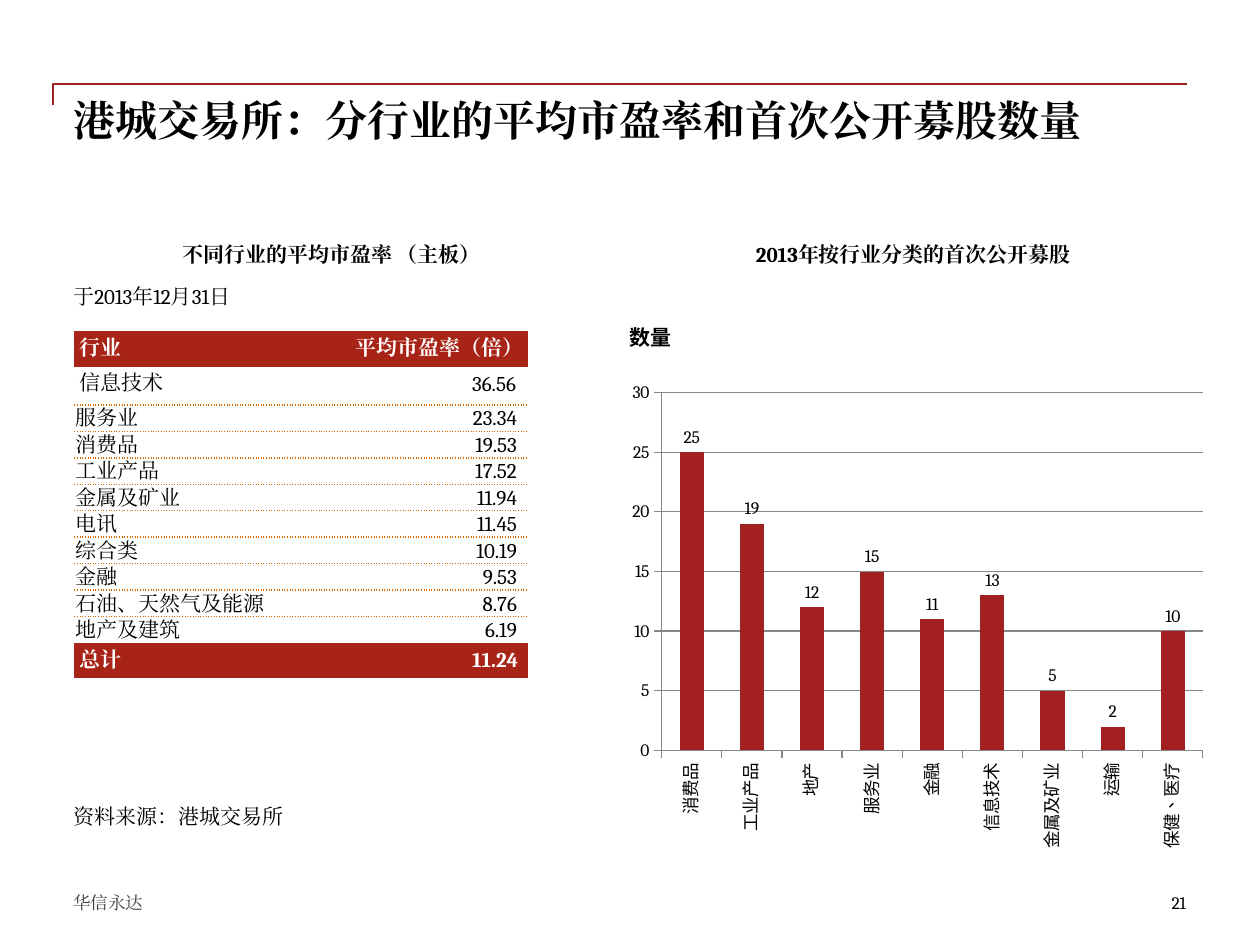
from lxml import etree
from pptx import Presentation
from pptx.chart.data import CategoryChartData
from pptx.dml.color import RGBColor
from pptx.enum import chart as charts, text
from pptx.oxml import ns, parse_xml
from pptx.util import Cm, Pt

COLORS = {"rule": "A32020", "band": "A82417", "dots": "DC6900", "ink": "000000",
          "white": "FFFFFF", "footer": "404040", "grid": "868686"}
FACE = "Cambria"
NO_STYLE = "{2D5ABB26-0587-4C30-8999-92F81FD0307C}"
LEFT, CENTER, RIGHT = text.PP_ALIGN.LEFT, text.PP_ALIGN.CENTER, text.PP_ALIGN.RIGHT

RATIOS = [("信息技术", "36.56"), ("服务业", "23.34"), ("消费品", "19.53"),
          ("工业产品", "17.52"), ("金属及矿业", "11.94"), ("电讯", "11.45"),
          ("综合类", "10.19"), ("金融", "9.53"), ("石油、天然气及能源", "8.76"),
          ("地产及建筑", "6.19")]
OFFERINGS = {"消费品": 25, "工业产品": 19, "地产": 12, "服务业": 15, "金融": 11,
             "信息技术": 13, "金属及矿业": 5, "运输": 2, "保健、医疗": 10}


def rgb(name):
    return RGBColor.from_string(COLORS[name])


def apply(target, values):
    for name, value in values.items():
        setattr(target, name, value)


def style_font(font, size=12, bold=False, color="ink"):
    """Set the face for Latin and East Asian text alike."""
    apply(font, {"name": FACE, "size": Pt(size), "bold": bold})
    font.color.rgb = rgb(color)
    latin = font._element.find(ns.qn("a:latin")) if hasattr(font, "_element") else font._rPr.find(ns.qn("a:latin"))
    east_asian = etree.Element(ns.qn("a:ea"), typeface=FACE)
    latin.addnext(east_asian)


def write(frame, words, align=LEFT, **look):
    paragraph = frame.paragraphs[0]
    paragraph.alignment = align
    run = paragraph.add_run()
    run.text = words
    style_font(run.font, **look)
    return paragraph


def fill_frame(frame, words, **look):
    apply(frame, {"margin_left": 0, "margin_right": 0, "margin_top": 0, "margin_bottom": 0,
                  "word_wrap": True, "vertical_anchor": text.MSO_ANCHOR.TOP,
                  "auto_size": text.MSO_AUTO_SIZE.NONE})
    return write(frame, words, **look)


def add_label(slide, box, words, **look):
    label = slide.shapes.add_textbox(*map(Cm, box))
    fill_frame(label.text_frame, words, **look)


def add_heading(slide, box):
    x, y, width, height = box
    builder = slide.shapes.build_freeform(Cm(x), Cm(y + 0.41))
    builder.add_line_segments([(Cm(x), Cm(y)), (Cm(x + width), Cm(y))], close=False)
    rule = builder.convert_to_shape()
    rule.shadow.inherit = False
    rule.fill.background()
    rule.line.color.rgb = rgb("rule")
    rule.line.width = Pt(1)

    title = slide.shapes.title
    apply(title, {"left": Cm(x + 0.41), "top": Cm(y + 0.2),
                  "width": Cm(width - 0.42), "height": Cm(height - 0.2)})
    fill_frame(title.text_frame, "港城交易所：分行业的平均市盈率和首次公开募股数量", size=24, bold=True)


def dot_bottom(cell):
    cell._tc.get_or_add_tcPr().insert(0, parse_xml(
        f'<a:lnB {ns.nsdecls("a")} w="12700"><a:solidFill><a:srgbClr val="{COLORS["dots"]}"/>'
        '</a:solidFill><a:prstDash val="sysDot"/></a:lnB>'))


def add_ratio_table(slide, box):
    x, y, width, height = box
    rows = [("行业", "平均市盈率（倍）"), *RATIOS, ("总计", "11.24")]
    last = len(rows) - 1
    table = slide.shapes.add_table(len(rows), 2, *map(Cm, box)).table
    apply(table, {"first_row": False, "horz_banding": False})
    table._tbl.tblPr.find(ns.qn("a:tableStyleId")).text = NO_STYLE
    table.columns[0].width, table.columns[1].width = Cm(4.6), Cm(width - 4.6)
    heights = {0: 0.71, 1: 0.77, last: 0.71}
    body_height = (height - sum(heights.values())) / (len(rows) - len(heights))

    for r, row in enumerate(rows):
        table.rows[r].height = Cm(heights.get(r, body_height))
        banded = r in (0, last)
        for c, words in enumerate(row):
            cell = table.cell(r, c)
            if banded:
                margins = (0.1, 0.2 if r == last else 0.1, 0.1, 0.1)
            elif r == 1:
                margins = (0.25, 0.25, 0.13, 0.13) if c else (0.1,) * 4
            else:
                margins = (0.03, 0.23 if c else 0.03, 0.03, 0)
            sides = ("margin_left", "margin_right", "margin_top", "margin_bottom")
            apply(cell, dict(zip(sides, map(Cm, margins))))
            cell.vertical_anchor = text.MSO_ANCHOR.MIDDLE if 1 < r < last else text.MSO_ANCHOR.TOP
            paragraph = write(cell.text_frame, words, align=RIGHT if c else LEFT,
                              bold=banded, color="white" if banded else "ink")
            if r in heights:
                apply(paragraph, {"space_before": Pt(2.4), "space_after": Pt(2.4)})
            if banded:
                cell.fill.solid()
                cell.fill.fore_color.rgb = rgb("band")
            else:
                cell.fill.background()
                if r < last - 1:
                    dot_bottom(cell)


def chart_layout(inner="", **places):
    """Manual layout in fractions of the chart area."""
    modes = "".join(f'<c:{k}Mode val="edge"/>' for k in ("x", "y"))
    values = "".join(f'<c:{k} val="{v}"/>' for k, v in places.items())
    return parse_xml(f'<c:layout {ns.nsdecls("c")}><c:manualLayout>{inner}{modes}{values}'
                     '</c:manualLayout></c:layout>')


def add_offering_chart(slide, box):
    data = CategoryChartData()
    data.categories = list(OFFERINGS)
    data.add_series("Series 1", list(OFFERINGS.values()))
    chart = slide.shapes.add_chart(charts.XL_CHART_TYPE.COLUMN_CLUSTERED, *map(Cm, box), data).chart
    chart.has_legend = False
    style_font(chart.font, size=10)

    write(chart.chart_title.text_frame, "数量", bold=True)
    title = chart.chart_title._element
    for old in title.findall(ns.qn("c:layout")):
        title.remove(old)
    title.find(ns.qn("c:tx")).addnext(chart_layout(x=0.01, y=0.02))
    plot_area = chart._chartSpace.chart.plotArea
    for old in plot_area.findall(ns.qn("c:layout")):
        plot_area.remove(old)
    plot_area.insert(0, chart_layout('<c:layoutTarget val="inner"/>', x=0.07, y=0.15, w=0.91, h=0.65))

    plot = chart.plots[0]
    apply(plot, {"gap_width": 150, "vary_by_categories": False, "has_data_labels": True})
    apply(plot.data_labels, {"show_value": True, "position": charts.XL_LABEL_POSITION.OUTSIDE_END})
    columns = plot.series[0].format.fill
    columns.solid()
    columns.fore_color.rgb = rgb("rule")

    values, sectors = chart.value_axis, chart.category_axis
    apply(values, {"minimum_scale": 0, "maximum_scale": 30, "major_unit": 5,
                   "has_major_gridlines": True})
    for axis in (values, sectors):
        axis.major_tick_mark = charts.XL_TICK_MARK.OUTSIDE
        axis.format.line.color.rgb = rgb("grid")
        style_font(axis.tick_labels.font, size=10)
    values.major_gridlines.format.line.color.rgb = rgb("grid")
    sectors._element.find(ns.qn("c:txPr")).find(ns.qn("a:bodyPr")).set("rot", "-5400000")


def main():
    deck = Presentation()
    apply(deck, {"slide_width": Cm(25.4), "slide_height": Cm(19.05)})
    slide = deck.slides.add_slide(deck.slide_layouts[5])
    add_heading(slide, (1.07, 1.7, 22.86, 2.74))
    add_label(slide, (1.48, 4.87, 10.41, 0.5), "不同行业的平均市盈率 （主板）", align=CENTER, bold=True)
    add_label(slide, (12.9, 4.87, 11.03, 0.5), "2013年按行业分类的首次公开募股", align=CENTER, bold=True)
    add_label(slide, (1.48, 5.72, 10.41, 0.5), "于2013年12月31日")
    add_ratio_table(slide, (1.5, 6.68, 9.15, 7))
    add_offering_chart(slide, (12.5, 6.25, 11.99, 11.1))
    add_label(slide, (1.48, 16.2, 18.31, 0.5), "资料来源：港城交易所")
    add_label(slide, (1.48, 17.98, 7.19, 0.42), "华信永达", size=10, color="footer")
    add_label(slide, (19.69, 17.98, 4.22, 0.42), "21", align=RIGHT, size=10)
    deck.save("out.pptx")


if __name__ == "__main__":
    main()
